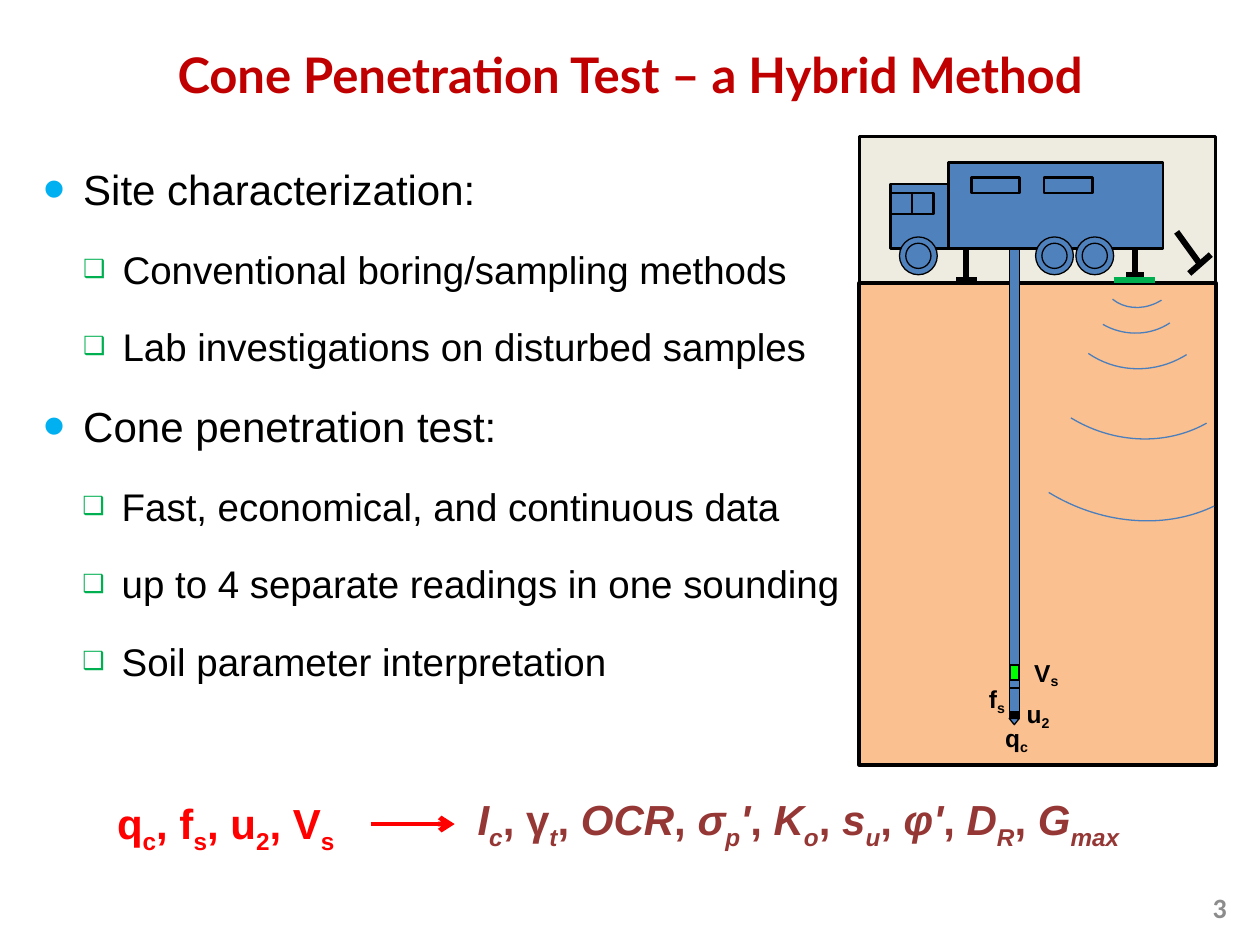
from lxml.etree import SubElement
from pptx import Presentation
from pptx.dml.color import RGBColor
from pptx.enum.shapes import MSO_CONNECTOR, MSO_SHAPE as Shape
from pptx.enum.text import MSO_ANCHOR as Anchor, PP_ALIGN as Align
from pptx.oxml.ns import qn
from pptx.util import Pt

BLACK = RGBColor(0x00, 0x00, 0x00)
STEEL = RGBColor(0x4F, 0x81, 0xBD)
WAVE = RGBColor(0x4B, 0x7E, 0xBC)
SOIL = RGBColor(0xFA, 0xC0, 0x90)
SKY = RGBColor(0xEE, 0xEC, 0xE1)
SENSOR = RGBColor(0x00, 0xFF, 0x00)
GREEN = RGBColor(0x00, 0xB0, 0x50)
CYAN = RGBColor(0x00, 0xB0, 0xF0)
RED = RGBColor(0xFF, 0x00, 0x00)
TITLE_RED = RGBColor(0xC0, 0x00, 0x00)
BROWN = RGBColor(0x95, 0x37, 0x35)
GRAY = RGBColor(0x8C, 0x8C, 0x8C)

# text size, indent, hanging, bullet, bullet colour, bullet size in percent
TOPIC = (24, 22.5, 22.5, "•", CYAN, 150)
METHOD = (22, 45, 22.5, "❑", GREEN, 65)
BENEFIT = (22, 44.5, 22.5, "❑", GREEN, 65)
OUTLINE = [
    ("Site characterization:", TOPIC),
    ("Conventional boring/sampling methods", METHOD),
    ("Lab investigations on disturbed samples", METHOD),
    ("Cone penetration test:", TOPIC),
    ("Fast, economical, and continuous data", BENEFIT),
    ("up to 4 separate readings in one sounding", BENEFIT),
    ("Soil parameter interpretation", BENEFIT),
]

# (text, style): "i" is italic, "_" is subscript
READINGS = [("q", ""), ("c", "_"), (", f", ""), ("s", "_"),
            (", u", ""), ("2", "_"), (", V", ""), ("s", "_")]
PARAMETERS = [
    ("I", "i"), ("c", "i_"), (", γ", ""), ("t", "i_"), (",", ""), (" OCR", "i"),
    (", ", ""), ("σ", "i"), ("p", "i_"), ("'", "i"), (",", ""), (" K", "i"),
    ("o", "i_"), (",", ""), (" s", "i"), ("u", "i_"), (", ", ""), ("φ'", "i"),
    (",", ""), (" D", "i"), ("R", "i_"), (",", ""), (" G", "i"), ("max", "i_"),
]


def add_part(slide, kind, left, top, width, height, fill=STEEL, line=BLACK, weight=0.75):
    part = slide.shapes.add_shape(kind, Pt(left), Pt(top), Pt(width), Pt(height))
    part.shadow.inherit = False
    if fill is None:
        part.fill.background()
    else:
        part.fill.solid()
        part.fill.fore_color.rgb = fill
    part.line.color.rgb = line
    part.line.width = Pt(weight)
    return part


def add_line(slide, x1, y1, x2, y2, color=BLACK, weight=3.5):
    line = slide.shapes.add_connector(
        MSO_CONNECTOR.STRAIGHT, Pt(x1), Pt(y1), Pt(x2), Pt(y2))
    line.line.color.rgb = color
    line.line.width = Pt(weight)
    SubElement(line._element.spPr, qn("a:effectLst"))
    return line


def add_frame(slide, left, top, width, height, wrap=True, anchor=Anchor.TOP):
    frame = slide.shapes.add_textbox(Pt(left), Pt(top), Pt(width), Pt(height)).text_frame
    frame.word_wrap = wrap
    frame.vertical_anchor = anchor
    return frame


def add_run(paragraph, text, size, color, font="Arial", bold=True):
    run = paragraph.add_run()
    run.text = text
    run.font.size = Pt(size)
    run.font.name = font
    run.font.bold = bold
    run.font.color.rgb = color
    return run


def add_symbols(paragraph, symbols, size, color, drop):
    """Write (text, style) pairs, lowering subscripts by drop percent."""
    for text, style in symbols:
        font = add_run(paragraph, text, size, color).font
        font.italic = "i" in style
        if "_" in style:
            font._element.set("baseline", str(-drop * 1000))


def set_bullet(paragraph, indent, hanging, char, color, percent):
    properties = paragraph._p.get_or_add_pPr()
    properties.set("marL", str(Pt(indent)))
    properties.set("indent", str(-Pt(hanging)))
    SubElement(SubElement(properties, qn("a:buClr")), qn("a:srgbClr")).set("val", str(color))
    SubElement(properties, qn("a:buSzPct")).set("val", str(percent * 1000))
    SubElement(properties, qn("a:buFont")).set("typeface", "Arial")
    SubElement(properties, qn("a:buChar")).set("char", char)


def draw_heading(slide, left, top, width, height):
    paragraph = add_frame(slide, left, top, width, height, anchor=Anchor.MIDDLE).paragraphs[0]
    paragraph.alignment = Align.CENTER
    add_run(paragraph, "Cone Penetration Test – a Hybrid Method", 28, TITLE_RED, "Lato")


def draw_outline(slide, left, top, width, height):
    frame = add_frame(slide, left, top, width, height)
    for index, (text, (size, *bullet)) in enumerate(OUTLINE):
        paragraph = frame.add_paragraph() if index else frame.paragraphs[0]
        paragraph.space_after = Pt(18)
        set_bullet(paragraph, *bullet)
        add_run(paragraph, text, size, BLACK, bold=False)


def draw_truck(slide, left, top):
    """Draw the truck from the cab's left side and the roof's top."""
    for x, y, width, height in [
        (33, 0, 122.5, 49), (46, 8.7, 27.5, 8.7), (87.7, 8.7, 27.5, 8.7),
        (0, 12.2, 33, 36.8), (12.2, 17.3, 12.2, 12.2), (0, 17.3, 12.2, 12.2),
    ]:
        add_part(slide, Shape.RECTANGLE, left + x, top + y, width, height, weight=1.5)
    for center in (93.6, 116.6, 15.8):
        for diameter in (21.6, 14.4):
            add_part(slide, Shape.OVAL, left + center - diameter / 2,
                     top + 53.3 - diameter / 2, diameter, diameter)
    for leg, foot, half_width in ((43.2, 67, 5.8), (139.7, 64, 5)):
        add_line(slide, left + leg, top + 49, left + leg, top + 67)
        add_line(slide, left + leg - half_width, top + foot, left + leg + half_width, top + foot)


def draw_waves(slide, left, top):
    """Draw the shear waves that spread from the source."""
    for x, y, width, height, turn in [
        (134.6, 48.2, 54.7, 47.5, 129), (121.7, 41, 69.8, 72.7, 119.9),
        (108, 29.5, 105.8, 102.2, 124.6), (87.8, 26, 138.2, 152, 121.4),
        (69.1, 37.4, 163.4, 193, 121.4),
    ]:
        wave = add_part(slide, Shape.ARC, left + x, top + y, width, height, None, WAVE)
        wave.adjustments[0] = 176.87
        wave.rotation = turn


def draw_cone(slide, left, top):
    """Draw the rod, cone tip and sensors, with the four reading labels."""
    for y, height in ((0, 251.3), (251.3, 17.3)):
        add_part(slide, Shape.RECTANGLE, left, top + y, 5.8, height)
    add_part(slide, Shape.ISOSCELES_TRIANGLE, left, top + 268.6, 5.8, 3.6).rotation = 180
    add_line(slide, left, top + 266.4, left + 5.8, top + 266.4)
    add_part(slide, Shape.RECTANGLE, left + 0.7, top + 238.3, 5, 8.6, SENSOR, weight=1.25)
    for letter, index, x, y, width in [
        ("q", "c", -9.4, 267.8, 28), ("u", "2", 2.9, 254.1, 30.2),
        ("f", "s", -18.7, 245.5, 29.5), ("V", "s", 7.2, 230.4, 39.6),
    ]:
        label = add_frame(slide, left + x, top + y, width, 24.5)
        add_symbols(label.paragraphs[0], [(letter, ""), (index, "_")], 14, BLACK, 18)


def draw_sounding(slide, left, top, width, height):
    ground = 83.9
    add_part(slide, Shape.RECTANGLE, left, top + ground, width, height - ground, SOIL, weight=2)
    add_part(slide, Shape.RECTANGLE, left, top, width, ground, SKY, weight=1.75)
    draw_cone(slide, left + 85.7, top + 64.1)
    draw_truck(slide, left + 18, top + 15.1)
    add_line(slide, left + 145.4, top + 82.1, left + 169.2, top + 82.1, GREEN)
    add_line(slide, left + 181.4, top + 54.7, left + 194.4, top + 72.7)
    add_line(slide, left + 200.9, top + 67.7, left + 188.6, top + 78.5)
    draw_waves(slide, left, top)


def draw_interpretation(slide, left, top):
    """Draw the arrow that leads from the readings to the soil parameters."""
    arrow = add_line(slide, left + 152, top + 20.9, left + 200, top + 20.9, RED, 2.75)
    outline = arrow._element.spPr.find(qn("a:ln"))
    SubElement(outline, qn("a:tailEnd")).set("type", "arrow")
    for symbols, x, y, width, color in (
        (PARAMETERS, 206, 0, 386, BROWN), (READINGS, 0, 2.2, 144, RED),
    ):
        frame = add_frame(slide, left + x, top + y, width, 36, wrap=False)
        add_symbols(frame.paragraphs[0], symbols, 24, color, 25)


def draw_page_number(slide, left, top, width, height):
    paragraph = add_frame(slide, left, top, width, height, anchor=Anchor.MIDDLE).paragraphs[0]
    paragraph.alignment = Align.RIGHT
    add_run(paragraph, "3", 16, GRAY, "Calibri")


def main():
    deck = Presentation()
    deck.slide_width, deck.slide_height = Pt(720), Pt(540)
    slide = deck.slides.add_slide(deck.slide_layouts[6])
    draw_page_number(slide, 540, 504, 168, 28.8)
    draw_sounding(slide, 491, 77.8, 203.8, 359.3)
    draw_outline(slide, 18, 90, 474, 360)
    draw_interpretation(slide, 59.8, 450)
    draw_heading(slide, 0, 12, 720, 60)
    deck.save("out.pptx")


if __name__ == "__main__":
    main()
